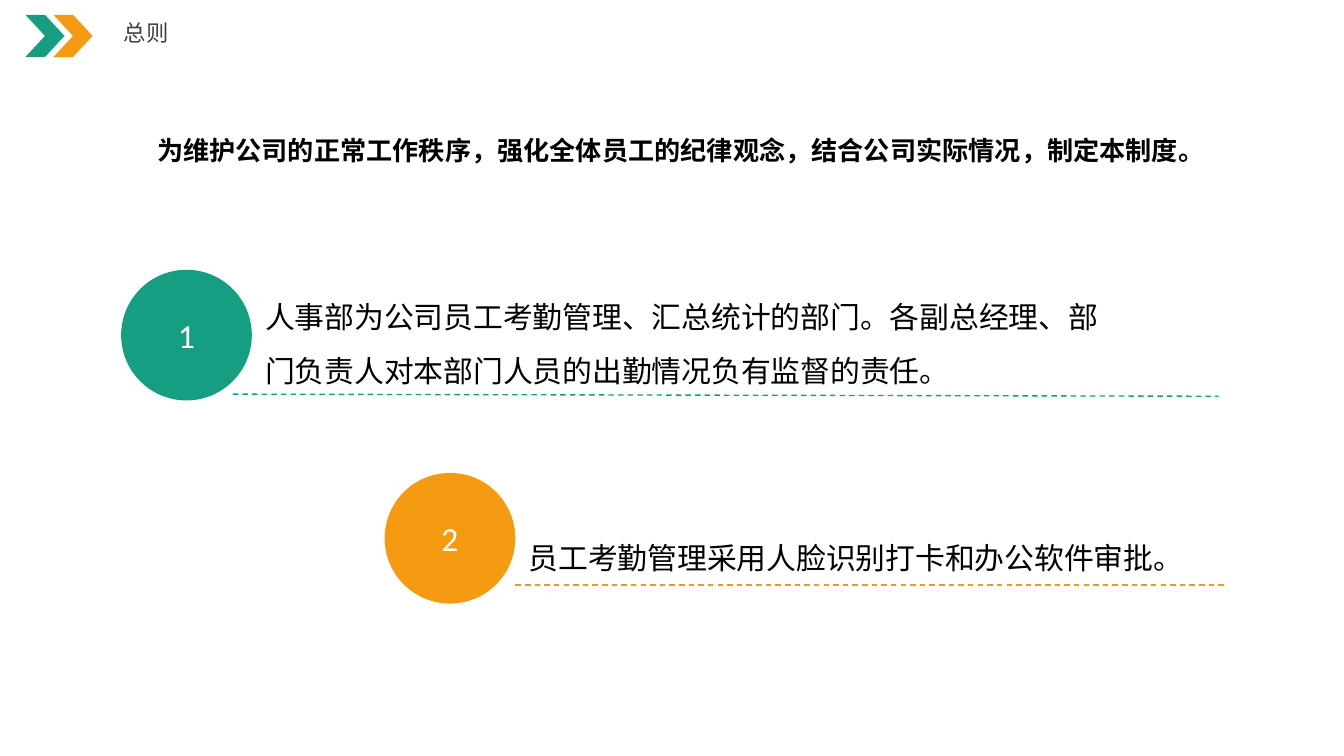
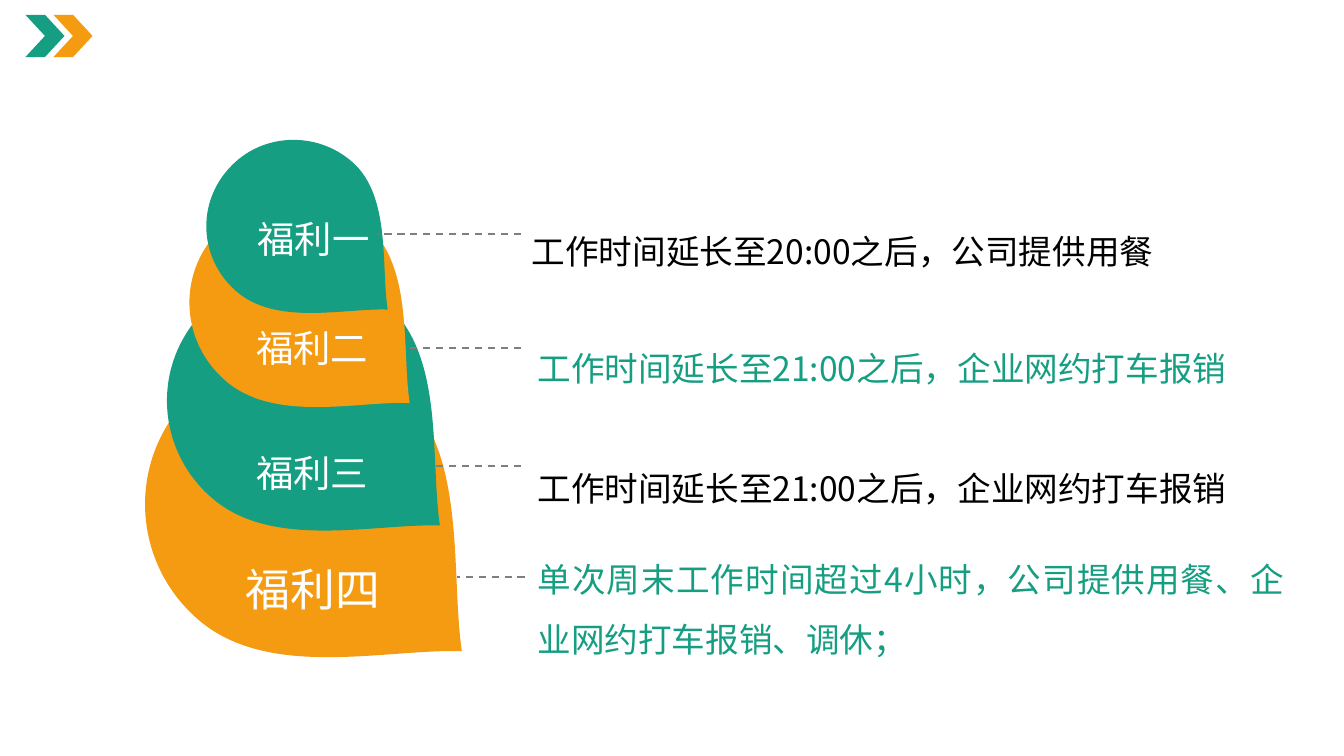
from lxml.etree import SubElement
from pptx import Presentation
from pptx.dml.color import RGBColor
from pptx.enum.dml import MSO_LINE
from pptx.enum.shapes import MSO_CONNECTOR, MSO_SHAPE as Preset
from pptx.enum.text import MSO_ANCHOR as Anchor, MSO_AUTO_SIZE as Fit, PP_ALIGN as Align
from pptx.oxml.ns import qn
from pptx.util import Cm, Pt

GREEN = RGBColor(0x16, 0x9E, 0x82)
ORANGE = RGBColor(0xF5, 0x9B, 0x11)
BLACK = RGBColor(0, 0, 0)
WHITE = RGBColor(0xFF, 0xFF, 0xFF)
GREY = RGBColor(0x7F, 0x7F, 0x7F)
TITLE_GREY = RGBColor(0x40, 0x40, 0x40)
HEI = "Noto Sans CJK SC"
TITLE_ONLY, BLANK = 5, 6
DROP_WIDTH, DROP_HEIGHT = 6.43, 6.55
DROP_START = (1.09, 1.27)
DROP_CONTROLS = [
    (0, 2.46), (0.1, 4.29), (1.3, 5.36),
    (2.62, 6.55), (4.88, 5.94), (6.32, 5.99),
    (6.1, 4.52), (6.43, 2.21), (5.16, 1.07),
    (3.96, 0), (2.13, 0.1), DROP_START,
]


def bend(freeform):
    """Turns every three straight segments into one cubic curve."""
    outline = next(freeform.element.iter(qn("a:path")))
    segments = outline.findall(qn("a:lnTo"))
    for first in range(0, len(segments), 3):
        curve = SubElement(outline, qn("a:cubicBezTo"))
        for segment in segments[first:first + 3]:
            curve.append(segment[0])
            outline.remove(segment)
    outline.append(outline.find(qn("a:close")))


class Deck:
    """Holds the deck's style and the slide being filled."""

    def __init__(self):
        self.prs = Presentation()
        self.prs.slide_width, self.prs.slide_height = Cm(25.4), Cm(14.29)
        self.slide = None

    def new_slide(self, layout):
        self.slide = self.prs.slides.add_slide(self.prs.slide_layouts[layout])

    def master_chevrons(self):
        for left, color in ((0.48, GREEN), (1.01, ORANGE)):
            chevron = self.preset(Preset.CHEVRON, left, 0.28, 0.74, 0.8, color)
            self.prs.slide_master.shapes.element.append(chevron.element)

    def style(self, paragraph, size, color, font=HEI, align=Align.LEFT, bold=False):
        paragraph.alignment = align
        paragraph.font.size, paragraph.font.name = Pt(size), font
        paragraph.font.bold = bold
        paragraph.font.color.rgb = color
        defaults = paragraph._p.pPr.find(qn("a:defRPr"))
        SubElement(defaults, qn("a:ea")).set("typeface", font)

    def paint(self, shape, color):
        shape.shadow.inherit = False
        shape.fill.solid()
        shape.fill.fore_color.rgb = color
        shape.line.fill.background()
        return shape

    def preset(self, kind, left, top, width, height, color):
        shape = self.slide.shapes.add_shape(kind, Cm(left), Cm(top), Cm(width), Cm(height))
        return self.paint(shape, color)

    def title(self, words):
        heading = self.slide.shapes.title
        heading.left, heading.top = Cm(2.16), Cm(0.27)
        heading.width, heading.height = Cm(1.24), Cm(0.71)
        frame = heading.text_frame
        frame.text = words
        frame.word_wrap, frame.auto_size = False, Fit.SHAPE_TO_FIT_TEXT
        frame.vertical_anchor = Anchor.TOP
        frame.margin_left = frame.margin_right = Cm(0.18)
        frame.margin_top = frame.margin_bottom = Cm(0.1)
        self.style(frame.paragraphs[0], 12, TITLE_GREY)

    def text(self, words, left, top, width, height, size, color=BLACK,
             spacing=1, level=0, **look):
        frame = self.slide.shapes.add_textbox(
            Cm(left), Cm(top), Cm(width), Cm(height)).text_frame
        frame.text = words
        frame.word_wrap, frame.auto_size = True, Fit.SHAPE_TO_FIT_TEXT
        paragraph = frame.paragraphs[0]
        paragraph.level, paragraph.line_spacing = level, float(spacing)
        self.style(paragraph, size, color, **look)

    def badge(self, number, left, top, color):
        frame = self.preset(Preset.OVAL, left, top, 2.47, 2.47, color).text_frame
        frame.text = number
        frame.vertical_anchor = Anchor.MIDDLE
        self.style(frame.paragraphs[0], 18, WHITE, font="Calibri", align=Align.CENTER)

    def drop(self, left, top, width, height, color):
        start, *controls = [
            (Cm(left + x * width / DROP_WIDTH), Cm(top + y * height / DROP_HEIGHT))
            for x, y in [DROP_START] + DROP_CONTROLS]
        builder = self.slide.shapes.build_freeform(*start)
        builder.add_line_segments(controls, close=True)
        bend(self.paint(builder.convert_to_shape(), color))

    def dashes(self, start, end, color, weight):
        rule = self.slide.shapes.add_connector(
            MSO_CONNECTOR.STRAIGHT, *(Cm(length) for length in start + end))
        rule.line.color.rgb = color
        rule.line.width = Pt(weight)
        rule.line.dash_style = MSO_LINE.DASH
        SubElement(rule.element.spPr, qn("a:effectLst"))


def general_rules(deck):
    deck.new_slide(TITLE_ONLY)
    deck.master_chevrons()
    deck.title("总则")
    deck.text("为维护公司的正常工作秩序，强化全体员工的纪律观念，结合公司实际情况，制定本制度。",
              1.45, 2.41, 21.89, 0.86, 14, level=1, align=Align.JUSTIFY, bold=True)
    deck.badge("2", 7.27, 8.94, ORANGE)
    deck.badge("1", 2.29, 5.1, GREEN)
    deck.text("人事部为公司员工考勤管理、汇总统计的部门。各副总经理、部门负责人对本部门人员的出勤情况负有监督的责任。",
              4.76, 5.18, 16.46, 2.18, 16, spacing=1.5)
    deck.text("员工考勤管理采用人脸识别打卡和办公软件审批。", 9.74, 10.08, 13.06, 0.94, 16)
    deck.dashes((4.4, 7.45), (23.03, 7.49), GREEN, 0.75)
    deck.dashes((9.74, 11.06), (23.14, 11.06), ORANGE, 0.75)


def benefits(deck):
    deck.new_slide(BLANK)
    late_ride = "工作时间延长至21:00之后，企业网约打车报销"
    tiers = [
        ("福利四", 24, (3.89, 10.49, 4.04, 1.27), (2.41, 6.32, 6.43, 6.55, ORANGE),
         (9.92, 8.64, 10.9),
         "单次周末工作时间超过4小时，公司提供用餐、企业网约打车报销、调休；",
         (9.91, 10.06, 14.61, 2.44), GREEN),
        ("福利三", 20, (4.35, 8.38, 3.1, 1.12), (2.87, 4.85, 5.54, 5.56, GREEN),
         (9.85, 8.15, 8.81), late_ride, (9.91, 8.33, 14.38, 1.27), BLACK),
        ("福利二", 20, (4.48, 6.02, 2.84, 1.12), (3.35, 3.53, 4.47, 4.47, ORANGE),
         (9.85, 7.65, 6.58), late_ride, (9.91, 6.07, 14.61, 1.27), GREEN),
        ("福利一", 20, (4.58, 3.96, 2.69, 1.12), (3.71, 2.46, 3.68, 3.71, GREEN),
         (9.85, 7.14, 4.42),
         "工作时间延长至20:00之后，公司提供用餐", (9.8, 3.86, 14.61, 1.27), BLACK),
    ]
    for label, size, label_box, drop, leader, benefit, benefit_box, color in tiers:
        outer, inner, level = leader
        deck.drop(*drop)
        deck.text(label, *label_box, size, WHITE, align=Align.CENTER)
        deck.dashes((outer, level), (inner, level), GREY, 1)
        deck.text(benefit, *benefit_box, 18, color, spacing=1.5, align=Align.JUSTIFY)


def main():
    deck = Deck()
    general_rules(deck)
    benefits(deck)
    deck.prs.save("out.pptx")


if __name__ == "__main__":
    main()
